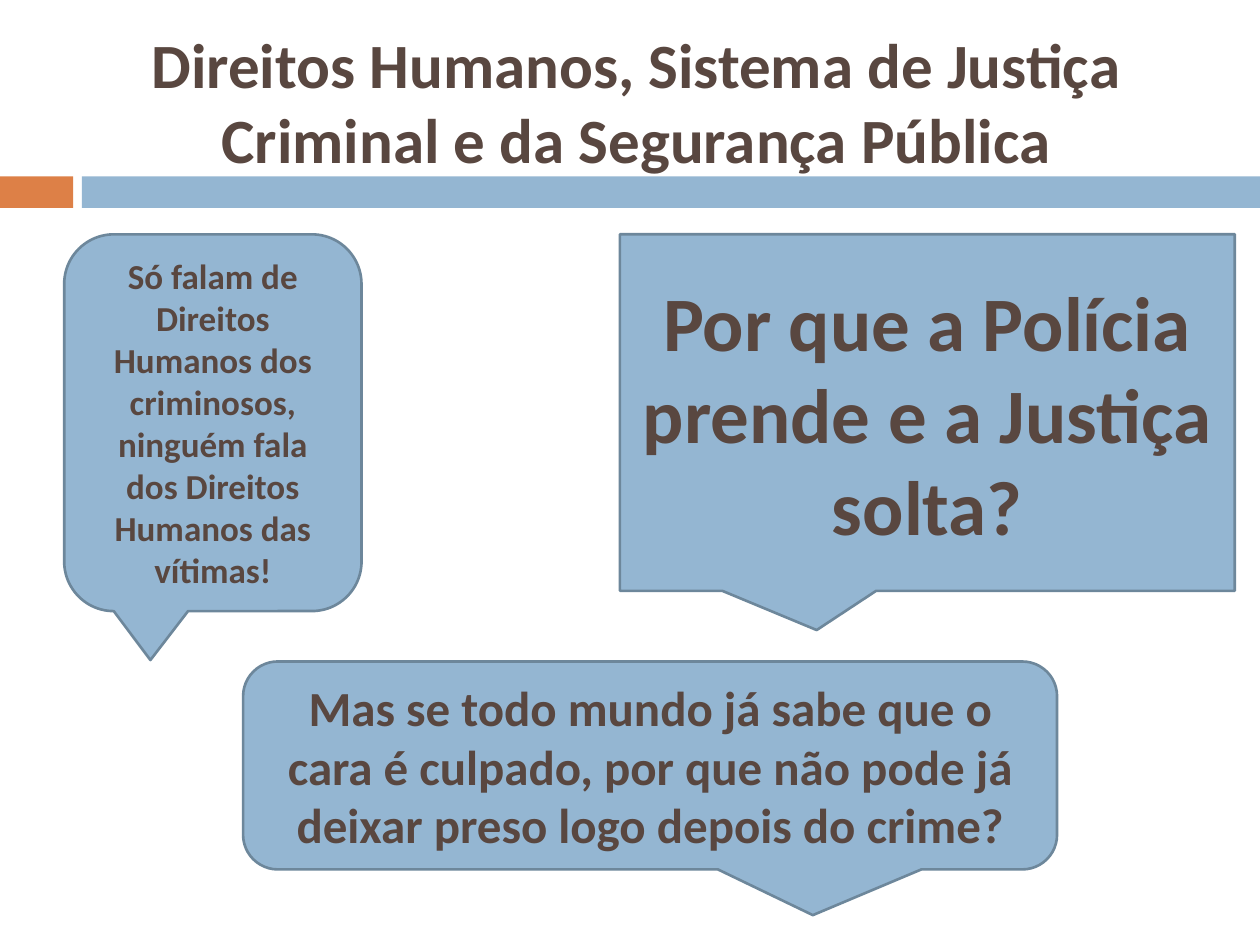
import pptx
import pptx.util
import pptx.dml.color
import pptx.enum.shapes
import pptx.enum.text

SLIDE_WIDTH, SLIDE_HEIGHT = 10, 7.5
COLORS = {"text": "594740", "blue": "94B6D2", "outline": "6D879B", "orange": "DD8047"}
SHAPES = pptx.enum.shapes.MSO_SHAPE


def color(name):
    """Return the palette colour with the given name."""
    return pptx.dml.color.RGBColor.from_string(COLORS[name])


def inches(box):
    """Convert a box of left, top, width and height to slide lengths."""
    return [pptx.util.Inches(length) for length in box]


def write(holder, wording, size):
    """Write bold, centred wording in the middle of a shape."""
    frame = holder.text_frame
    frame.word_wrap = True
    frame.vertical_anchor = pptx.enum.text.MSO_ANCHOR.MIDDLE
    paragraph = frame.paragraphs[0]
    paragraph.text = wording
    paragraph.alignment = pptx.enum.text.PP_ALIGN.CENTER
    paragraph.font.name = "Calibri"
    paragraph.font.size = pptx.util.Pt(size)
    paragraph.font.bold = True
    paragraph.font.color.rgb = color("text")


def add_filled(slide, preset, box, fill):
    """Add a flat preset shape with a solid fill."""
    shape = slide.shapes.add_shape(preset, *inches(box))
    shape.shadow.inherit = False
    shape.fill.solid()
    shape.fill.fore_color.rgb = color(fill)
    return shape


def add_band(slide, box):
    """Split a band into an orange tab, a gap and a blue bar."""
    left, top, width, height = box
    tab, bar_start = 0.058 * width, 0.065 * width
    pieces = [(left, tab, "orange"), (left + bar_start, width - bar_start, "blue")]
    for piece_left, piece_width, fill in pieces:
        piece = add_filled(slide, SHAPES.RECTANGLE, (piece_left, top, piece_width, height), fill)
        piece.line.fill.background()


def add_title(slide, box, wording):
    """Add the slide heading."""
    write(slide.shapes.add_textbox(*inches(box)), wording, 36)


def add_callout(slide, box, preset, tip, wording, size):
    """Add a speech callout whose tip is a share of its box from the centre."""
    callout = add_filled(slide, preset, box, "blue")
    callout.line.color.rgb = color("outline")
    callout.line.width = pptx.util.Pt(1.5)
    for index, offset in enumerate(tip):
        callout.adjustments[index] = offset
    write(callout, wording, size)


def main():
    """Build and save the slide."""
    presentation = pptx.Presentation()
    presentation.slide_width = pptx.util.Inches(SLIDE_WIDTH)
    presentation.slide_height = pptx.util.Inches(SLIDE_HEIGHT)
    slide = presentation.slides.add_slide(presentation.slide_layouts[6])

    add_band(slide, (0, 1.4, SLIDE_WIDTH, 0.25))
    add_title(slide, (0.55, 0.21, 9, 1.18),
              "Direitos Humanos, Sistema de Justiça Criminal e da Segurança Pública")

    callouts_top = 1.86
    rounded, square = SHAPES.ROUNDED_RECTANGULAR_CALLOUT, SHAPES.RECTANGULAR_CALLOUT
    callouts = [
        ((0.51, callouts_top, 2.36, 2.99), rounded, (-0.21, 0.63),
         "Só falam de Direitos Humanos dos criminosos, ninguém fala dos Direitos "
         "Humanos das vítimas!", 20),
        ((4.92, callouts_top, 4.88, 2.83), square, (-0.18, 0.61),
         "Por que a Polícia prende e a Justiça solta?", 44),
        ((1.93, 5.25, 6.46, 1.65), rounded, (0.2, 0.72),
         "Mas se todo mundo já sabe que o cara é culpado, por que não pode já "
         "deixar preso logo depois do crime?", 28),
    ]
    for callout in callouts:
        add_callout(slide, *callout)

    presentation.save("out.pptx")


if __name__ == "__main__":
    main()
